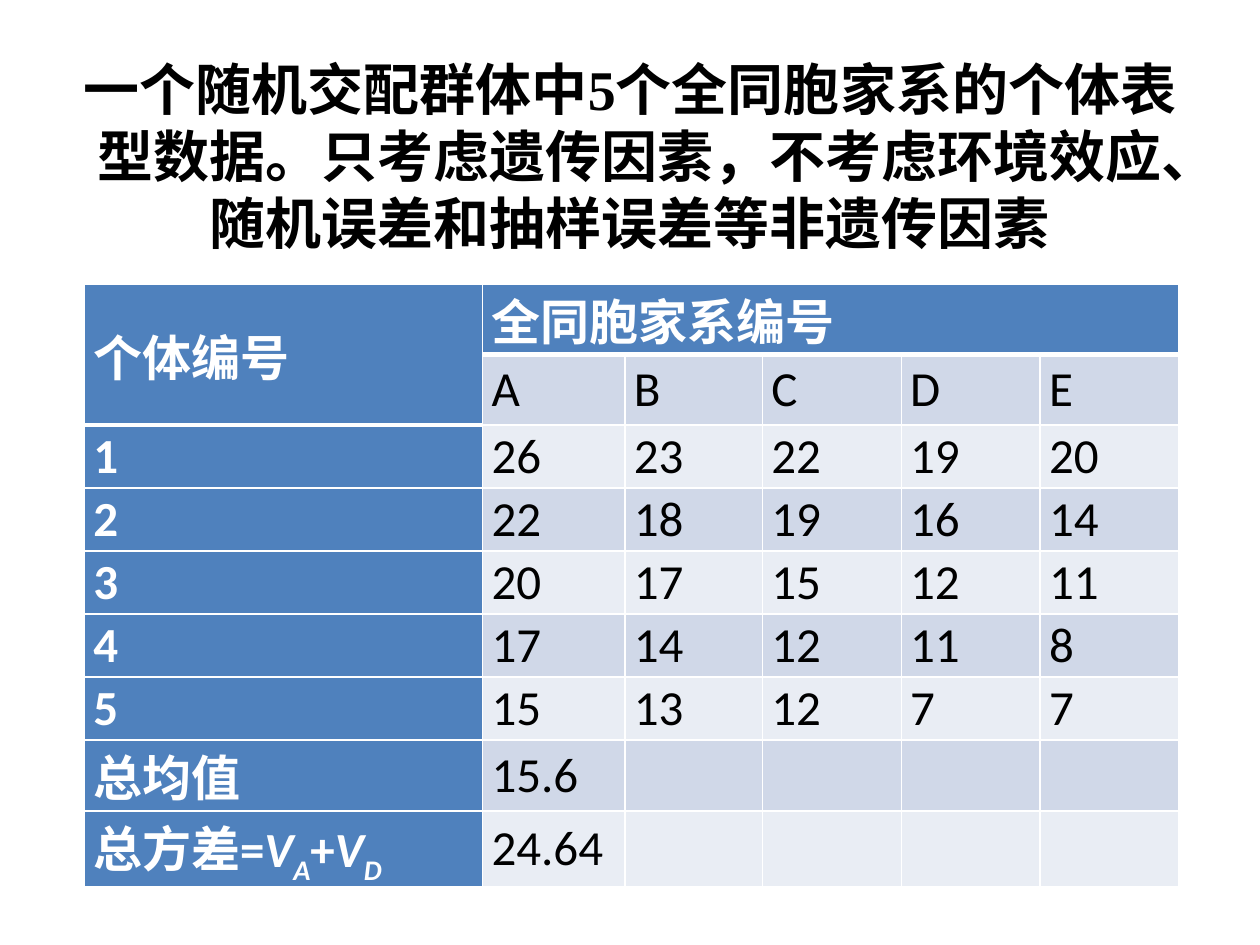
import pptx
import pptx.dml.color
import pptx.enum.text
import pptx.oxml.ns
import pptx.util
import lxml.etree

Cm = pptx.util.Cm
Pt = pptx.util.Pt
RGBColor = pptx.dml.color.RGBColor
MIDDLE = pptx.enum.text.MSO_ANCHOR.MIDDLE
qn = pptx.oxml.ns.qn

BLACK = RGBColor(0x00, 0x00, 0x00)
WHITE = RGBColor(0xFF, 0xFF, 0xFF)
HEADER_BLUE = RGBColor(0x4F, 0x81, 0xBD)
BAND_DARK = RGBColor(0xD0, 0xD8, 0xE8)
BAND_LIGHT = RGBColor(0xE9, 0xED, 0xF4)

TITLE = "一个随机交配群体中5个全同胞家系的个体表型数据。只考虑遗传因素，不考虑环境效应、随机误差和抽样误差等非遗传因素"
VARIANCE_FORMULA = [
    ("总方差=", False, False),
    ("V", True, False), ("A", True, True),
    ("+", False, False),
    ("V", True, False), ("D", True, True),
]
ROWS = [
    ["个体编号", "全同胞家系编号", "", "", "", ""],
    ["", "A", "B", "C", "D", "E"],
    ["1", "26", "23", "22", "19", "20"],
    ["2", "22", "18", "19", "16", "14"],
    ["3", "20", "17", "15", "12", "11"],
    ["4", "17", "14", "12", "11", "8"],
    ["5", "15", "13", "12", "7", "7"],
    ["总均值", "15.6", "", "", "", ""],
    [VARIANCE_FORMULA, "24.64", "", "", "", ""],
]
COLUMN_WIDTHS = [8.03, 2.87, 2.77, 2.8, 2.8, 2.8]
ROW_HEIGHTS = [1.42] * 2 + [1.27] * 5 + [1.43, 1.52]


def add_run(paragraph, text, font_name, size, color, bold, italic=False, subscript=False):
    run = paragraph.add_run()
    run.text = text
    run.font.name = font_name
    run.font.size = Pt(size)
    run.font.color.rgb = color
    run.font.bold = bold
    run.font.italic = italic
    if subscript:
        run.font._element.set("baseline", "-25000")


def add_title(slide):
    title = slide.shapes.add_textbox(Cm(1.27), Cm(0.93), Cm(22.86), Cm(4.39))
    frame = title.text_frame
    frame.word_wrap = True
    frame.vertical_anchor = MIDDLE
    paragraph = frame.paragraphs[0]
    paragraph.alignment = pptx.enum.text.PP_ALIGN.CENTER
    add_run(paragraph, TITLE, "Times New Roman", 32, BLACK, True)


def set_borders(cell, top, bottom):
    properties = cell._tc.get_or_add_tcPr()
    widths = {"a:lnL": 1, "a:lnR": 1, "a:lnT": top, "a:lnB": bottom}
    for position, (tag, width) in enumerate(widths.items()):
        edge = lxml.etree.Element(qn(tag), w=str(Pt(width)))
        fill = lxml.etree.SubElement(edge, qn("a:solidFill"))
        lxml.etree.SubElement(fill, qn("a:srgbClr"), val=str(WHITE))
        properties.insert(position, edge)


def fill_cell(cell, content, row, column):
    is_header = row == 0 or column == 0
    band = BAND_LIGHT if row % 2 == 0 else BAND_DARK
    cell.fill.solid()
    cell.fill.fore_color.rgb = HEADER_BLUE if is_header else band
    cell.vertical_anchor = MIDDLE
    cell.margin_left = cell.margin_right = Cm(0.18)
    cell.margin_top = cell.margin_bottom = 0
    header_end = 1 if column == 0 else 0
    set_borders(cell,
                top=3 if row == header_end + 1 else 1,
                bottom=3 if row == header_end else 1)
    pieces = [(content, False, False)] if isinstance(content, str) else content
    for text, italic, subscript in pieces:
        if text:
            add_run(cell.text_frame.paragraphs[0], text, "Calibri", 28,
                    WHITE if is_header else BLACK, is_header, italic, subscript)


def add_family_table(slide):
    families = slide.shapes.add_table(
        len(ROWS), len(COLUMN_WIDTHS), Cm(1.7), Cm(5.73),
        Cm(sum(COLUMN_WIDTHS)), Cm(sum(ROW_HEIGHTS))).table
    for column, width in zip(families.columns, COLUMN_WIDTHS):
        column.width = Cm(width)
    for row, height in zip(families.rows, ROW_HEIGHTS):
        row.height = Cm(height)
    for row, contents in enumerate(ROWS):
        for column, content in enumerate(contents):
            fill_cell(families.cell(row, column), content, row, column)
    families.cell(0, 0).merge(families.cell(1, 0))
    families.cell(0, 1).merge(families.cell(0, 5))


def main():
    presentation = pptx.Presentation()
    presentation.slide_width = Cm(25.4)
    presentation.slide_height = Cm(19.05)
    slide = presentation.slides.add_slide(presentation.slide_layouts[6])
    add_title(slide)
    add_family_table(slide)
    presentation.save("out.pptx")


if __name__ == "__main__":
    main()
